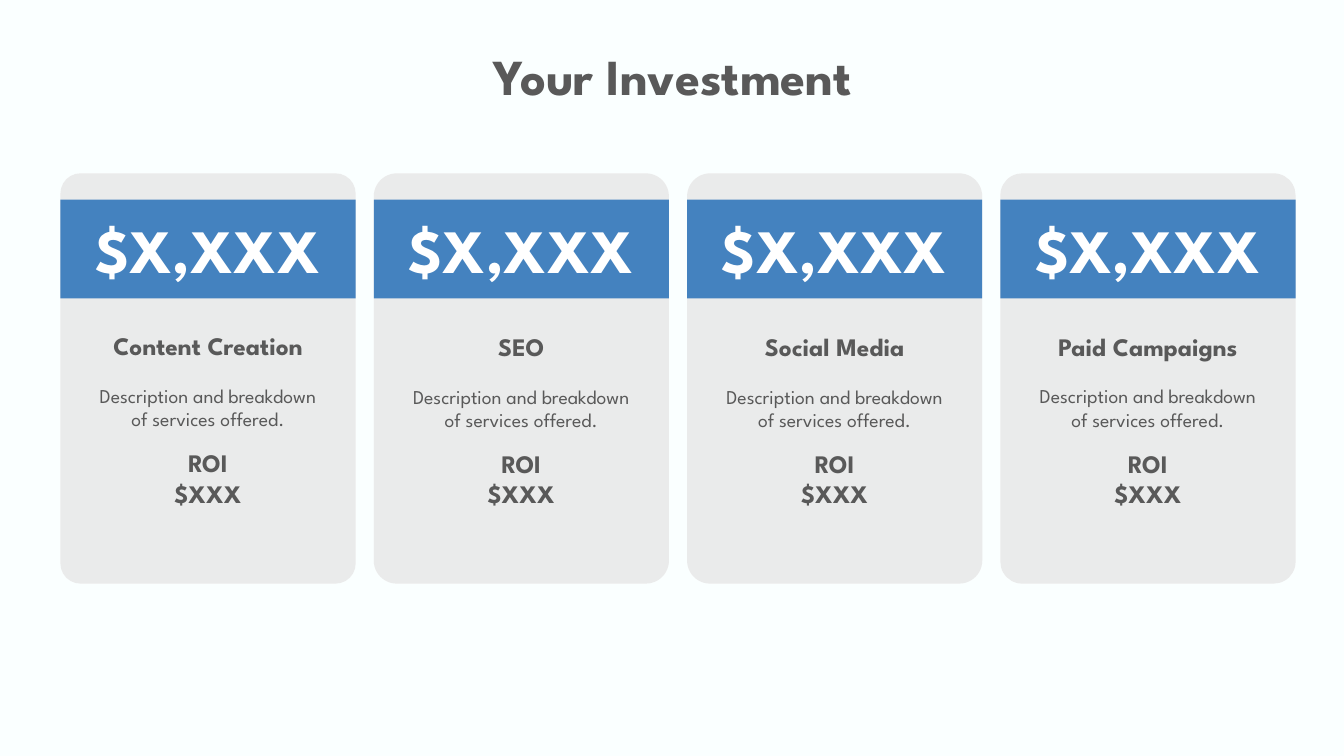
"""Build the investment slide with four priced service cards."""
from dataclasses import dataclass

import lxml.etree
import pptx
import pptx.dml.color
import pptx.enum.shapes
import pptx.enum.text
import pptx.oxml.ns
import pptx.util

Inches = pptx.util.Inches
Pt = pptx.util.Pt
ShapeType = pptx.enum.shapes.MSO_SHAPE
Anchor = pptx.enum.text.MSO_ANCHOR


@dataclass(frozen=True)
class Theme:
    """Colours, font and type sizes of the slide."""

    font: str = "League Spartan"
    background: str = "FAFFFF"
    card: str = "E7E6E6"
    card_opacity: int = 80
    band: str = "4482BF"
    text: str = "595959"
    price: str = "FFFFFF"
    title_size: int = 36
    price_size: int = 44
    heading_size: int = 18
    body_size: int = 14


THEME = Theme()
SERVICES = [
    ("Content Creation", 0.068),
    ("SEO", 0.078),
    ("Social Media", 0.078),
    ("Paid Campaigns", 0.074),
]


def set_fill(fill, color):
    """Apply a solid colour."""
    fill.solid()
    fill.fore_color.rgb = pptx.dml.color.RGBColor.from_string(color)


def set_opacity(shape, opacity):
    """Set the opacity of a solid shape fill in percent."""
    qualify = pptx.oxml.ns.qn
    fill_element = shape.element.spPr.find(qualify("a:solidFill"))
    alpha = lxml.etree.SubElement(fill_element[0], qualify("a:alpha"))
    alpha.set("val", str(opacity * 1000))


def set_frame(text_frame, margins, anchor):
    """Set wrapping, left/top/right/bottom margins and anchor."""
    text_frame.word_wrap = True
    text_frame.vertical_anchor = anchor
    sides = ("left", "top", "right", "bottom")
    for side, margin in zip(sides, margins):
        setattr(text_frame, f"margin_{side}", Inches(margin))


def write_lines(text_frame, lines, color):
    """Write one centred paragraph per (text, size, bold, space before)."""
    for index, (text, size, bold, space_before) in enumerate(lines):
        paragraph = text_frame.add_paragraph() if index else text_frame.paragraphs[0]
        paragraph.alignment = pptx.enum.text.PP_ALIGN.CENTER
        paragraph.space_before = Pt(space_before)
        run = paragraph.add_run()
        run.text = text
        run.font.name = THEME.font
        run.font.size = Pt(size)
        run.font.bold = bold
        run.font.color.rgb = pptx.dml.color.RGBColor.from_string(color)


def add_panel(slide, kind, box, color):
    """Add a filled shape without outline or shadow."""
    shape = slide.shapes.add_shape(kind, *map(Inches, box))
    shape.shadow.inherit = False
    shape.line.fill.background()
    set_fill(shape.fill, color)
    return shape


def add_title(slide, box, text):
    """Add the centred slide title."""
    text_frame = slide.shapes.add_textbox(*map(Inches, box)).text_frame
    set_frame(text_frame, (0.1, 0.05, 0.1, 0.05), Anchor.TOP)
    write_lines(text_frame, [(text, THEME.title_size, True, 0)], THEME.text)


def add_service_card(slide, box, service, corner):
    """Add a rounded service card with a price band across its top."""
    left, top, width, height = box
    card = add_panel(slide, ShapeType.ROUNDED_RECTANGLE, box, THEME.card)
    set_opacity(card, THEME.card_opacity)
    card.adjustments[0] = corner
    set_frame(card.text_frame, (0.3, 1.5, 0.3, 0.3), Anchor.TOP)
    lines = [
        (service, THEME.heading_size, True, 0),
        ("Description and breakdown of services offered.", THEME.body_size, False, 16.5),
        ("ROI", THEME.heading_size, True, 12),
        ("$XXX", THEME.heading_size, True, 0),
    ]
    write_lines(card.text_frame, lines, THEME.text)

    band = add_panel(slide, ShapeType.RECTANGLE, (left, top + 0.26, width, 0.98), THEME.band)
    set_frame(band.text_frame, (0.1, 0.05, 0.1, 0.05), Anchor.MIDDLE)
    write_lines(band.text_frame, [("$X,XXX", THEME.price_size, True, 0)], THEME.price)


def add_service_row(slide, box, gap):
    """Spread the service cards evenly across the box."""
    left, top, width, height = box
    card_width = (width - gap * (len(SERVICES) - 1)) / len(SERVICES)
    for index, (service, corner) in enumerate(SERVICES):
        card_left = left + index * (card_width + gap)
        add_service_card(slide, (card_left, top, card_width, height), service, corner)


def main():
    """Build and save the presentation."""
    presentation = pptx.Presentation()
    presentation.slide_width = Inches(13.33)
    presentation.slide_height = Inches(7.5)
    slide = presentation.slides.add_slide(presentation.slide_layouts[6])
    set_fill(slide.background.fill, THEME.background)
    add_title(slide, (0.71, 0.4, 11.92, 0.71), "Your Investment")
    add_service_row(slide, (0.6, 1.72, 12.25, 4.07), 0.18)
    presentation.save("out.pptx")


if __name__ == "__main__":
    main()
